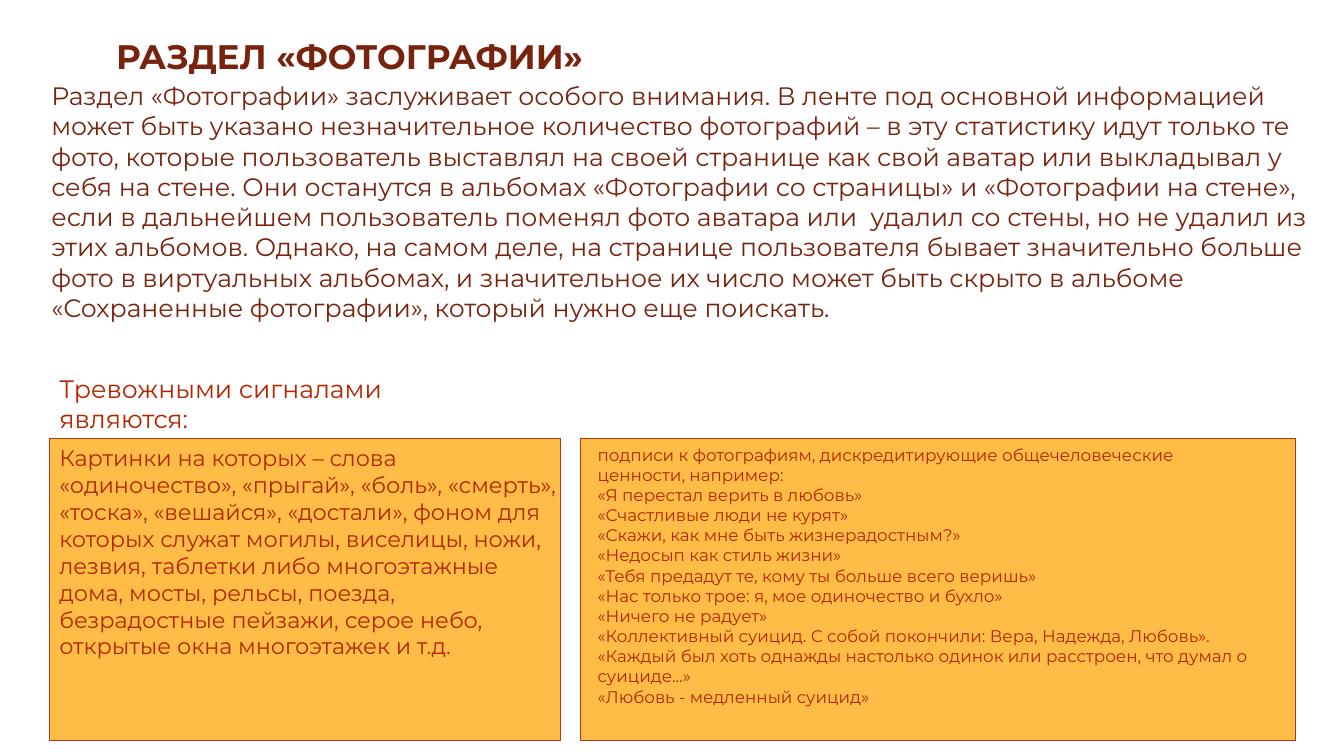
from pptx import Presentation
from pptx.dml.color import RGBColor
from pptx.enum.shapes import MSO_SHAPE
from pptx.enum.text import MSO_ANCHOR, PP_ALIGN
from pptx.util import Pt

RECTANGLE = MSO_SHAPE.RECTANGLE
TOP = MSO_ANCHOR.TOP
LEFT = PP_ALIGN.LEFT

COLORS = {"heading": "78230D", "signal": "B22600", "panel": "FFBD47", "border": "AC3819"}

INTRO = (
    "Раздел «Фотографии» заслуживает особого внимания. В ленте под основной информацией "
    "может быть указано незначительное количество фотографий – в эту статистику идут только те "
    "фото, которые пользователь выставлял на своей странице как свой аватар или выкладывал у "
    "себя на стене. Они останутся в альбомах «Фотографии со страницы» и «Фотографии на стене», "
    "если в дальнейшем пользователь поменял фото аватара или  удалил со стены, но не удалил из "
    "этих альбомов. Однако, на самом деле, на странице пользователя бывает значительно больше "
    "фото в виртуальных альбомах, и значительное их число может быть скрыто в альбоме "
    "«Сохраненные фотографии», который нужно еще поискать."
)
PICTURES = (
    "Картинки на которых – слова «одиночество», «прыгай», «боль», «смерть», "
    "«тоска», «вешайся», «достали», фоном для которых служат могилы, виселицы, ножи, "
    "лезвия, таблетки либо многоэтажные дома, мосты, рельсы, поезда, "
    "безрадостные пейзажи, серое небо, открытые окна многоэтажек и т.д."
)
CAPTIONS = [
    "подписи к фотографиям, дискредитирующие общечеловеческие ценности, например:",
    "«Я перестал верить в любовь»",
    "«Счастливые люди не курят»",
    "«Скажи, как мне быть жизнерадостным?»",
    "«Недосып как стиль жизни»",
    "«Тебя предадут те, кому ты больше всего веришь»",
    "«Нас только трое: я, мое одиночество и бухло»",
    "«Ничего не радует»",
    "«Коллективный суицид. С собой покончили: Вера, Надежда, Любовь».",
    "«Каждый был хоть однажды настолько одинок или расстроен, что думал о суициде...»",
    "«Любовь - медленный суицид»",
]


class SlideBuilder:
    font = "Montserrat"

    def __init__(self, prs):
        self.slide = prs.slides.add_slide(prs.slide_layouts[6])

    def color(self, name):
        return RGBColor.from_string(COLORS[name])

    def panel(self, left, top, width, height):
        s = self.slide.shapes.add_shape(RECTANGLE, Pt(left), Pt(top), Pt(width), Pt(height))
        s.shadow.inherit = False
        s.fill.solid()
        s.fill.fore_color.rgb = self.color("panel")
        s.line.color.rgb = self.color("border")
        s.line.width = Pt(1)

    def text(self, box, lines, size, color, bold=False, frame=None, spacing=1.0):
        s = self.slide.shapes.add_textbox(*map(Pt, box))
        tf = s.text_frame
        frame_format = {"word_wrap": True, "vertical_anchor": TOP, **(frame or {})}
        for name, value in frame_format.items():
            setattr(tf, name, value)
        font_format = {"name": self.font, "size": Pt(size), "bold": bold}
        for i, line in enumerate(lines):
            p = tf.add_paragraph() if i else tf.paragraphs[0]
            p.alignment = LEFT
            p.line_spacing = spacing
            r = p.add_run()
            r.text = line
            for name, value in font_format.items():
                setattr(r.font, name, value)
            r.font.color.rgb = self.color(color)


def main():
    prs = Presentation()
    prs.slide_width, prs.slide_height = Pt(960), Pt(540)
    page = SlideBuilder(prs)

    page.panel(35.3, 313.2, 365, 216)
    page.text((66.2, 28.8, 828, 104.4), ["РАЗДЕЛ «ФОТОГРАФИИ»"], 24.3, "heading", bold=True,
              frame={"margin_left": Pt(16.8), "margin_top": Pt(0)}, spacing=0.9)
    page.text((29.6, 54, 916.6, 203.8), [INTRO], 18, "heading")
    page.text((35.3, 262.8, 274.3, 51.1), ["Тревожными сигналами являются:"], 18, "signal")
    page.text((35.3, 313.9, 373.7, 181.4), [PICTURES], 16, "signal")
    page.panel(414.7, 313.2, 510.5, 216)
    page.text((419.8, 313.9, 485.3, 232.6), CAPTIONS, 12, "signal")

    prs.save("out.pptx")


if __name__ == "__main__":
    main()
